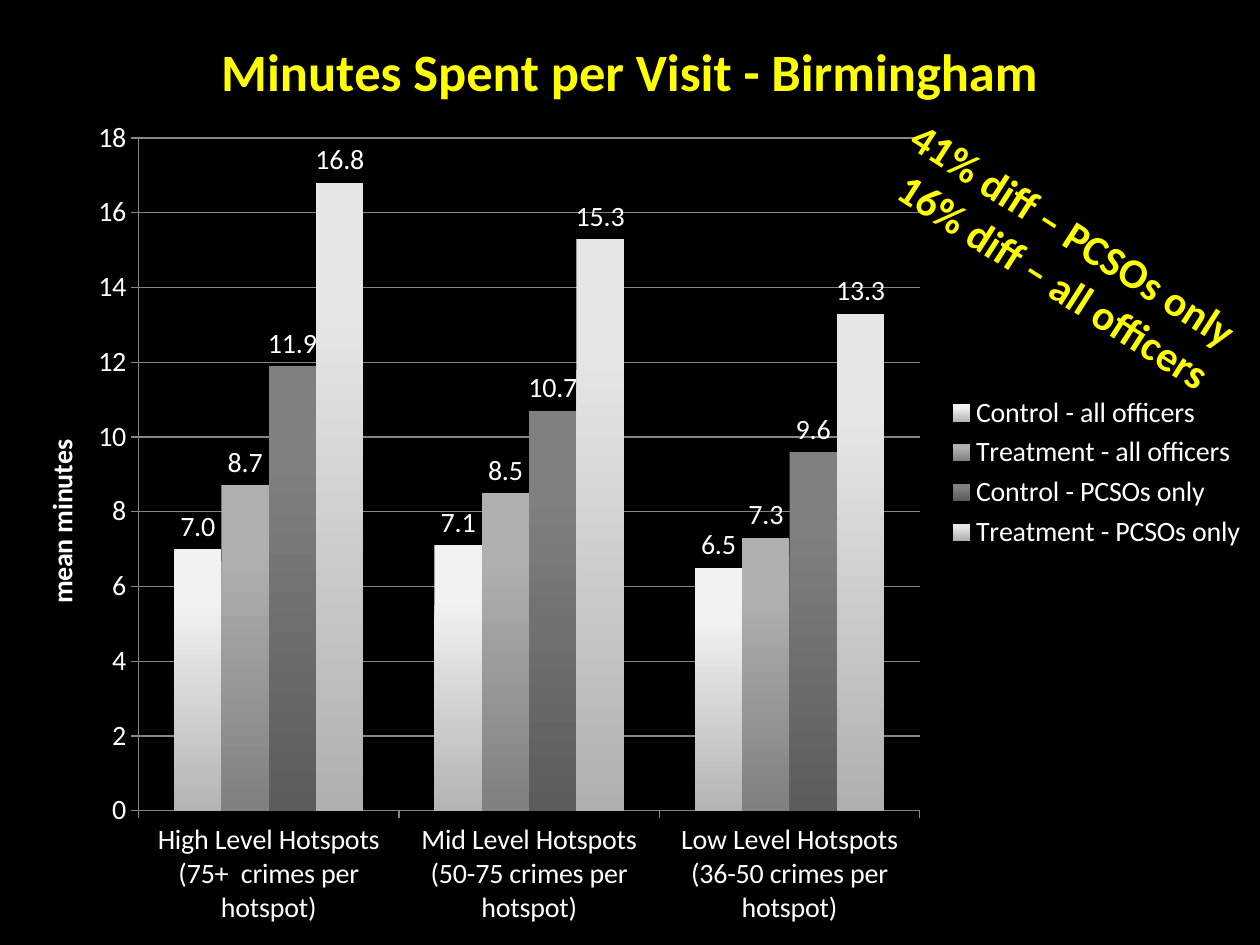
from lxml.etree import SubElement
from pptx import Presentation
from pptx.chart.data import CategoryChartData
from pptx.dml.color import RGBColor
from pptx.enum.chart import XL_CHART_TYPE, XL_LABEL_POSITION, XL_LEGEND_POSITION, XL_TICK_MARK
from pptx.enum.text import MSO_ANCHOR, PP_ALIGN
from pptx.oxml.ns import qn
from pptx.util import Inches, Pt

BLACK = RGBColor(0, 0, 0)
WHITE = RGBColor(255, 255, 255)
YELLOW = RGBColor(255, 255, 0)
GREY = RGBColor(0x86, 0x86, 0x86)
PALE = RGBColor(0xF2, 0xF2, 0xF2)
SILVER = RGBColor(0xB4, 0xB4, 0xB4)
MID = RGBColor(0xB0, 0xB0, 0xB0)
STEEL = RGBColor(0x80, 0x80, 0x80)
DARK = RGBColor(0x5C, 0x5C, 0x5C)
LIGHT = RGBColor(0xE6, 0xE6, 0xE6)
FONT = "Calibri"

LEVELS = [
    "High Level Hotspots (75+  crimes per hotspot)",
    "Mid Level Hotspots (50-75 crimes per hotspot)",
    "Low Level Hotspots (36-50 crimes per hotspot)",
]
SERIES = [
    ("Control - all officers", (7, 7.1, 6.5), PALE, SILVER),
    ("Treatment - all officers", (8.7, 8.5, 7.3), MID, STEEL),
    ("Control - PCSOs only", (11.9, 10.7, 9.6), STEEL, DARK),
    ("Treatment - PCSOs only", (16.8, 15.3, 13.3), LIGHT, MID),
]


def set_font(font, size, color, bold=False):
    font.name = FONT
    font.size = Pt(size)
    font.bold = bold
    font.color.rgb = color


def set_layout(node, **parts):
    layout = node.find(qn("c:layout"))
    if layout is None:
        layout = SubElement(node, qn("c:layout"))
        node.insert(0, layout)
    manual = SubElement(layout, qn("c:manualLayout"))
    for tag, val in parts.items():
        SubElement(manual, qn("c:" + tag)).set("val", str(val))


def set_title(title, text, size, color):
    title.text_frame.text = text
    set_font(title.text_frame.paragraphs[0].runs[0].font, size, color, True)


def style_axis(axis):
    axis.major_tick_mark = XL_TICK_MARK.OUTSIDE
    axis.minor_tick_mark = XL_TICK_MARK.NONE
    axis.format.line.color.rgb = GREY
    set_font(axis.tick_labels.font, 16, WHITE)


def style_bars(bars, top, base):
    fill = bars.format.fill
    fill.gradient()
    fill.gradient_angle = 270
    for stop, color, place in zip(fill.gradient_stops, (top, base), (0.2, 1)):
        stop.color.rgb = color
        stop.position = place
    labels = bars.data_labels
    labels.show_value = True
    labels.number_format = "#,##0.0"
    labels.number_format_is_linked = False
    labels.position = XL_LABEL_POSITION.OUTSIDE_END
    set_font(labels.font, 16, WHITE)


def add_bars(slide, left, top, width, height):
    data = CategoryChartData(number_format="#,##0.0")
    data.categories = LEVELS
    for name, vals, _, _ in SERIES:
        data.add_series(name, vals)
    chart = slide.shapes.add_chart(
        XL_CHART_TYPE.COLUMN_CLUSTERED, left, top, width, height, data
    ).chart
    set_font(chart.font, 16, WHITE)
    set_title(chart.chart_title, "Minutes Spent per Visit - Birmingham", 30, YELLOW)

    plot = chart.plots[0]
    plot.gap_width = 150
    plot.overlap = 0
    plot.vary_by_categories = False
    for bars, (_, _, head, base) in zip(plot.series, SERIES):
        style_bars(bars, head, base)

    style_axis(chart.category_axis)
    axis = chart.value_axis
    style_axis(axis)
    axis.minimum_scale = 0
    axis.maximum_scale = 18
    axis.major_unit = 2
    axis.tick_labels.number_format = "0"
    axis.tick_labels.number_format_is_linked = False
    axis.major_gridlines.format.line.color.rgb = GREY
    set_title(axis.axis_title, "mean minutes", 16, WHITE)
    set_layout(axis.axis_title._element, xMode="edge", yMode="edge", x=0.03, y=0.46)
    set_layout(
        chart._chartSpace.chart.plotArea,
        layoutTarget="inner", xMode="edge", yMode="edge",
        x=0.11, y=0.146, w=0.62, h=0.712,
    )

    chart.has_legend = True
    chart.legend.position = XL_LEGEND_POSITION.RIGHT
    chart.legend.include_in_layout = False
    set_font(chart.legend.font, 16, WHITE)


def add_note(slide, left, top, width, height):
    box = slide.shapes.add_textbox(left, top, width, height)
    box.rotation = 32.7
    frame = box.text_frame
    frame.word_wrap = False
    frame.vertical_anchor = MSO_ANCHOR.TOP
    frame.text = "41% diff – PCSOs only\n16% diff – all officers"
    for para in frame.paragraphs:
        para.alignment = PP_ALIGN.RIGHT
        set_font(para.runs[0].font, 24, YELLOW, True)


def main():
    deck = Presentation()
    deck.slide_width = Inches(10)
    deck.slide_height = Inches(7.5)
    slide = deck.slides.add_slide(deck.slide_layouts[6])
    slide.background.fill.solid()
    slide.background.fill.fore_color.rgb = BLACK
    add_bars(slide, 0, 0, deck.slide_width, deck.slide_height)
    add_note(slide, Inches(6.79), Inches(1.56), Inches(3.22), Inches(0.91))
    deck.save("out.pptx")


if __name__ == "__main__":
    main()
